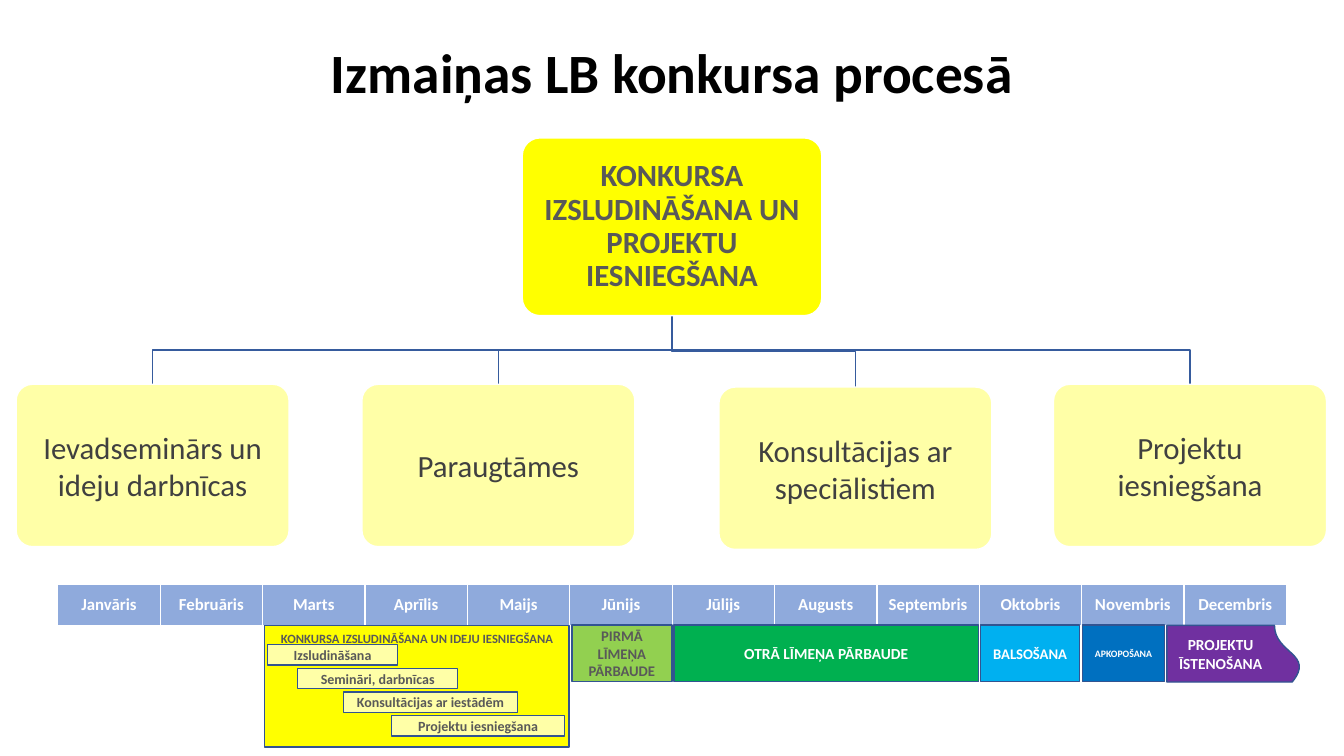
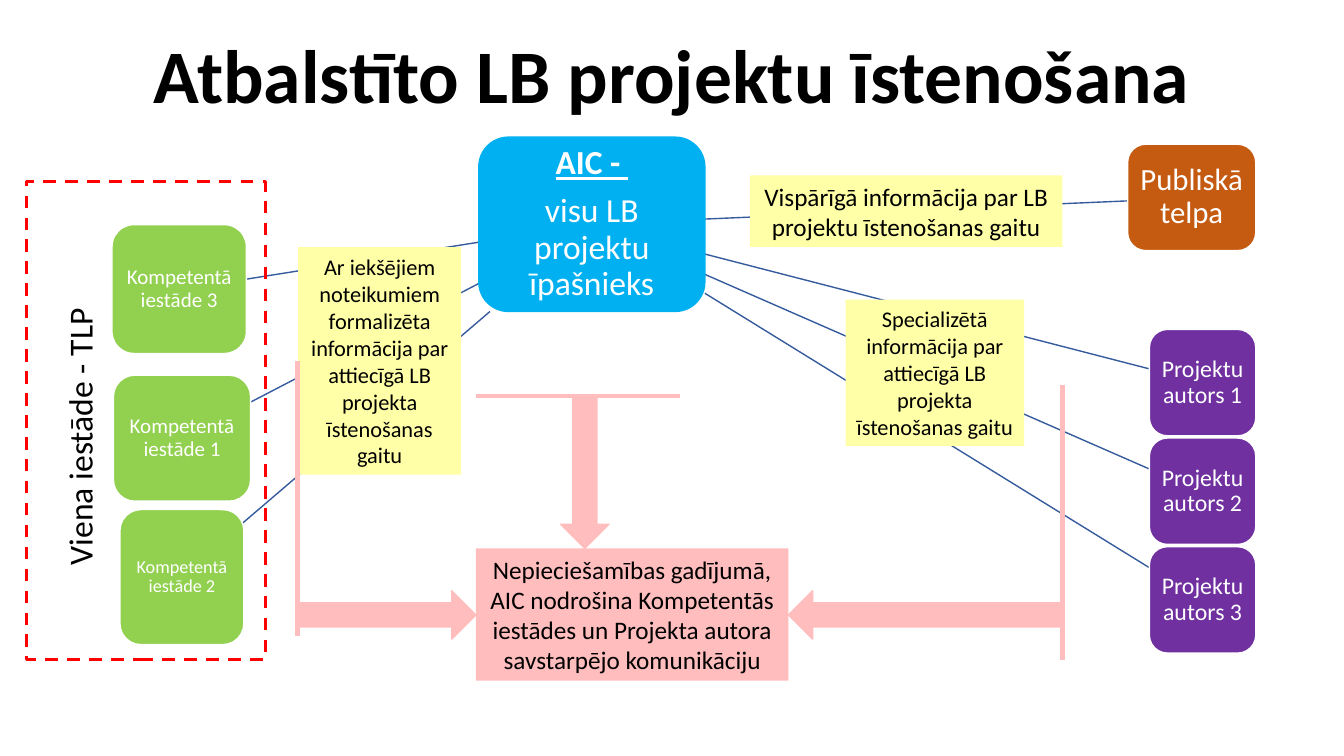
from dataclasses import dataclass

from lxml import etree
from pptx import Presentation
from pptx.dml.color import RGBColor
from pptx.enum.dml import MSO_LINE
from pptx.enum.shapes import MSO_CONNECTOR, MSO_SHAPE
from pptx.enum.text import MSO_ANCHOR, PP_ALIGN
from pptx.oxml.ns import qn
from pptx.util import Pt

RECTANGLE = MSO_SHAPE.RECTANGLE
ROUNDED = MSO_SHAPE.ROUNDED_RECTANGLE
DOCUMENT = MSO_SHAPE.FLOWCHART_DOCUMENT
DOWN_ARROW = MSO_SHAPE.DOWN_ARROW
LEFT_ARROW = MSO_SHAPE.LEFT_ARROW
RIGHT_ARROW = MSO_SHAPE.RIGHT_ARROW
STRAIGHT = MSO_CONNECTOR.STRAIGHT
DASH = MSO_LINE.DASH
CENTER = PP_ALIGN.CENTER
TOP = MSO_ANCHOR.TOP
MIDDLE = MSO_ANCHOR.MIDDLE

FONT = "Calibri"
COLORS = {
    "black": "000000",
    "white": "FFFFFF",
    "gray": "595959",
    "dark_gray": "404040",
    "yellow": "FFFF00",
    "cream": "FFFFA7",
    "month": "8FAADC",
    "link": "365B9D",
    "outline": "325491",
    "lime": "92D050",
    "green": "00B050",
    "sky": "00B0F0",
    "blue": "0070C0",
    "purple": "7030A0",
    "orange": "C55A11",
    "pink": "FFBDBD",
    "red": "FF0000",
}

MONTHS = (
    "Janvāris", "Februāris", "Marts", "Aprīlis", "Maijs", "Jūnijs",
    "Jūlijs", "Augusts", "Septembris", "Oktobris", "Novembris", "Decembris",
)


@dataclass(frozen=True)
class Block:
    text: str
    left: float
    top: float
    width: float
    height: float
    fill: str = ""
    line: str = ""
    size: float = 18
    color: str = "black"
    bold: bool = False
    kind: int = RECTANGLE
    corner: float = 0.17
    inset: tuple[float, float] = (7.2, 3.6)
    spacing: float = 1
    anchor: int = MIDDLE
    rotation: float = 0
    vertical: str = ""


@dataclass(frozen=True)
class Line:
    start: tuple[float, float]
    end: tuple[float, float]
    color: str = "link"
    width: float = 1


def rgb(name: str) -> RGBColor:
    return RGBColor.from_string(COLORS[name])


def format_paragraph(paragraph, size: float, color: str, bold: bool) -> None:
    paragraph.alignment = CENTER
    for run in paragraph.runs:
        run.font.name = FONT
        run.font.size = Pt(size)
        run.font.bold = bold
        run.font.color.rgb = rgb(color)


def write_text(shape, block: Block) -> None:
    frame = shape.text_frame
    frame.text = block.text
    frame.word_wrap = True
    frame.vertical_anchor = block.anchor
    frame.margin_left = frame.margin_right = Pt(block.inset[0])
    frame.margin_top = frame.margin_bottom = Pt(block.inset[1])
    if block.vertical:
        frame._txBody.bodyPr.set("vert", block.vertical)
    for paragraph in frame.paragraphs:
        format_paragraph(paragraph, block.size, block.color, block.bold)
        paragraph.line_spacing = block.spacing
        if len(frame.paragraphs) > 1:
            paragraph.space_after = Pt(0.35 * block.size)


def draw_block(slide, block: Block):
    shape = slide.shapes.add_shape(
        block.kind, Pt(block.left), Pt(block.top), Pt(block.width), Pt(block.height)
    )
    shape.shadow.inherit = False
    shape.rotation = block.rotation
    if block.kind == ROUNDED:
        shape.adjustments[0] = block.corner
    if block.fill:
        shape.fill.solid()
        shape.fill.fore_color.rgb = rgb(block.fill)
    else:
        shape.fill.background()
    if block.line:
        shape.line.color.rgb = rgb(block.line)
        shape.line.width = Pt(1)
    else:
        shape.line.fill.background()
    if block.text:
        write_text(shape, block)
    return shape


def draw_text(slide, block: Block) -> None:
    box = slide.shapes.add_textbox(
        Pt(block.left), Pt(block.top), Pt(block.width), Pt(block.height)
    )
    write_text(box, block)


def draw_title(slide, text: str, top: float, height: float, size: float) -> None:
    draw_text(slide, Block(text, 66, top, 828, height, size=size, bold=True, spacing=0.9))


def draw_line(slide, line: Line) -> None:
    connector = slide.shapes.add_connector(
        STRAIGHT, *(Pt(value) for value in line.start + line.end)
    )
    connector.line.color.rgb = rgb(line.color)
    connector.line.width = Pt(line.width)
    etree.SubElement(connector._element.spPr, qn("a:effectLst"))


def draw_branch(slide, parent: Block, child: Block) -> None:
    start_x = parent.left + parent.width / 2
    start_y = parent.top + parent.height
    end_x = child.left + child.width / 2
    middle_y = (start_y + child.top) / 2
    builder = slide.shapes.build_freeform(Pt(start_x), Pt(start_y))
    points = ((start_x, middle_y), (end_x, middle_y), (end_x, child.top))
    builder.add_line_segments([(Pt(x), Pt(y)) for x, y in points], close=False)
    branch = builder.convert_to_shape()
    branch.shadow.inherit = False
    branch.fill.background()
    branch.line.color.rgb = rgb("link")
    branch.line.width = Pt(1)


def draw_months(slide) -> None:
    table = slide.shapes.add_table(
        1, len(MONTHS), Pt(41.3), Pt(417.6), Pt(877.8), Pt(29.5)
    ).table
    table.horz_banding = False
    for column, (cell, month) in enumerate(zip(table.rows[0].cells, MONTHS)):
        table.columns[column].width = Pt(73.15)
        cell.text_frame.text = month
        cell.vertical_anchor = MIDDLE
        cell.fill.solid()
        cell.fill.fore_color.rgb = rgb("month")
        format_paragraph(cell.text_frame.paragraphs[0], 12, "white", True)


def build_process_slide(slide) -> None:
    draw_title(slide, "Izmaiņas LB konkursa procesā", 29, 50, 39.6)
    root = Block(
        "KONKURSA IZSLUDINĀŠANA UN PROJEKTU IESNIEGŠANA", 373, 98.5, 214, 127,
        "yellow", "white", 22, "gray", True, ROUNDED, 0.1, (6.5, 6.5), 0.9,
    )
    steps = [
        Block(text, left, top, 195, 116, "cream", "white", 22, "dark_gray",
              kind=ROUNDED, corner=0.1, inset=(6.5, 6.5))
        for text, left, top in (
            ("Ievadseminārs un ideju darbnīcas", 11.5, 274.5),
            ("Paraugtāmes", 258.5, 274.5),
            ("Konsultācijas ar speciālistiem", 513.5, 276.5),
            ("Projektu iesniegšana", 752.5, 274.5),
        )
    ]
    for step in steps:
        draw_branch(slide, root, step)
    for block in (root, *steps):
        draw_block(slide, block)

    draw_months(slide)
    draw_block(slide, Block(
        "KONKURSA IZSLUDINĀŠANA UN IDEJU IESNIEGŠANA", 189, 447, 217.5, 86.5,
        "yellow", "outline", 9, "gray", True, anchor=TOP,
    ))
    activities = (
        ("Izsludināšana", 191, 93),
        ("Semināri, darbnīcas", 212.5, 114.5),
        ("Konsultācijas ar iestādēm", 245.5, 124),
        ("Projektu iesniegšana", 279.5, 124),
    )
    for row, (text, left, width) in enumerate(activities):
        draw_block(slide, Block(text, left, 460.5 + 16.9 * row, width, 14.5,
                                "cream", "outline", 10, "gray", True))
    stages = (
        ("PIRMĀ LĪMEŅA PĀRBAUDE", 408.5, 71.5, "lime", 10.5, "gray"),
        ("OTRĀ LĪMEŅA PĀRBAUDE", 481.5, 217.5, "green", 11, "white"),
        ("BALSOŠANA", 700.5, 70.7, "sky", 10.5, "white"),
        ("APKOPOŠANA", 773.3, 58.5, "blue", 7, "white"),
    )
    for text, left, width, fill, size, color in stages:
        draw_block(slide, Block(text, left, 446.5, width, 40.5,
                                fill, "outline", size, color, True))
    draw_block(slide, Block(
        "PROJEKTU ĪSTENOŠANA", 861.2, 419, 40.5, 95.8, "purple", "outline", 11,
        "white", True, DOCUMENT, rotation=270, vertical="vert",
    ))


def build_support_slide(slide) -> None:
    draw_title(slide, "Atbalstīto LB projektu īstenošana", 19.5, 73.5, 54)
    links = (
        Line((342, 202.5), (178.5, 287.5)),
        Line((342, 173), (175.5, 199.5)),
        Line((350, 222.5), (173.5, 373.5)),
        Line((503.5, 181.5), (821, 263.5)),
        Line((503.5, 196), (821, 335)),
        Line((503.5, 209.5), (821, 405.5)),
        Line((503.5, 156.5), (805.5, 143.5)),
    )
    for link in links:
        draw_line(slide, link)

    hub = draw_block(slide, Block(
        "AIC - \nvisu LB projektu īpašnieks", 342, 98, 161.5, 124.5, "sky", "sky",
        24, "white", kind=ROUNDED, inset=(5, 5), spacing=0.9,
    ))
    heading = hub.text_frame.paragraphs[0].runs[0].font
    heading.bold = True
    heading.underline = True

    parties = (
        ("Kompetentā iestāde 1", 81, 268, 98, 90, "lime", 15, 3),
        ("Kompetentā iestāde 3", 80, 160.5, 96, 92, "lime", 15, 3),
        ("Kompetentā iestāde 2", 85.7, 364, 88.5, 96.5, "lime", 13, 3),
        *((f"Projektu autors {number}", 821, 157.7 + 77.6 * number, 76, 76,
           "purple", 17, 3.5) for number in (1, 2, 3)),
        ("Publiskā telpa", 805.5, 103, 91.5, 76, "orange", 22, 4),
    )
    for text, left, top, width, height, fill, size, inset in parties:
        draw_block(slide, Block(
            text, left, top, width, height, fill, "white", size, "white",
            kind=ROUNDED, inset=(inset, inset), spacing=0.9,
        ))

    notes = (
        Block("Vispārīgā informācija par LB projektu īstenošanas gaitu",
              535.7, 125.3, 223.2, 51, "cream"),
        Block("Specializētā informācija par attiecīgā LB projekta īstenošanas gaitu",
              604, 214, 127.5, 104.5, "cream", size=16),
        Block("Ar iekšējiem noteikumiem formalizēta informācija par attiecīgā LB "
              "projekta īstenošanas gaitu", 213, 176.5, 116.5, 162.5, "cream", size=16),
        Block("Nepieciešamības gadījumā, AIC nodrošina Kompetentās iestādes un "
              "Projekta autora savstarpējo komunikāciju", 340, 391.7, 223.2, 94.5, "pink"),
        Block("", 400.5, 283, 34.5, 108.7, "pink", "pink", kind=DOWN_ARROW),
        Block("", 563.2, 422, 195.8, 34.5, "pink", "pink", kind=LEFT_ARROW),
        Block("", 213, 422, 127, 34.5, "pink", "pink", kind=RIGHT_ARROW),
    )
    for note in notes:
        draw_block(slide, note)

    barriers = (
        Line((759, 275), (759, 471.5), "pink", 3),
        Line((212.5, 258), (212.5, 454.5), "pink", 3),
        Line((340, 283), (485.5, 283), "pink", 3),
    )
    for barrier in barriers:
        draw_line(slide, barrier)

    institution = draw_block(slide, Block("", 18.7, 129.6, 170.8, 341.3, line="red"))
    institution.line.width = Pt(2.25)
    institution.line.dash_style = DASH
    draw_text(slide, Block("Viena iestāde - TLP", 38.5, 206.5, 36, 211,
                           size=24, vertical="vert270", inset=(3.6, 7.2)))


def main() -> None:
    presentation = Presentation()
    presentation.slide_width = Pt(960)
    presentation.slide_height = Pt(540)
    blank = presentation.slide_layouts[6]
    for build in (build_process_slide, build_support_slide):
        build(presentation.slides.add_slide(blank))
    presentation.save("out.pptx")


if __name__ == "__main__":
    main()
